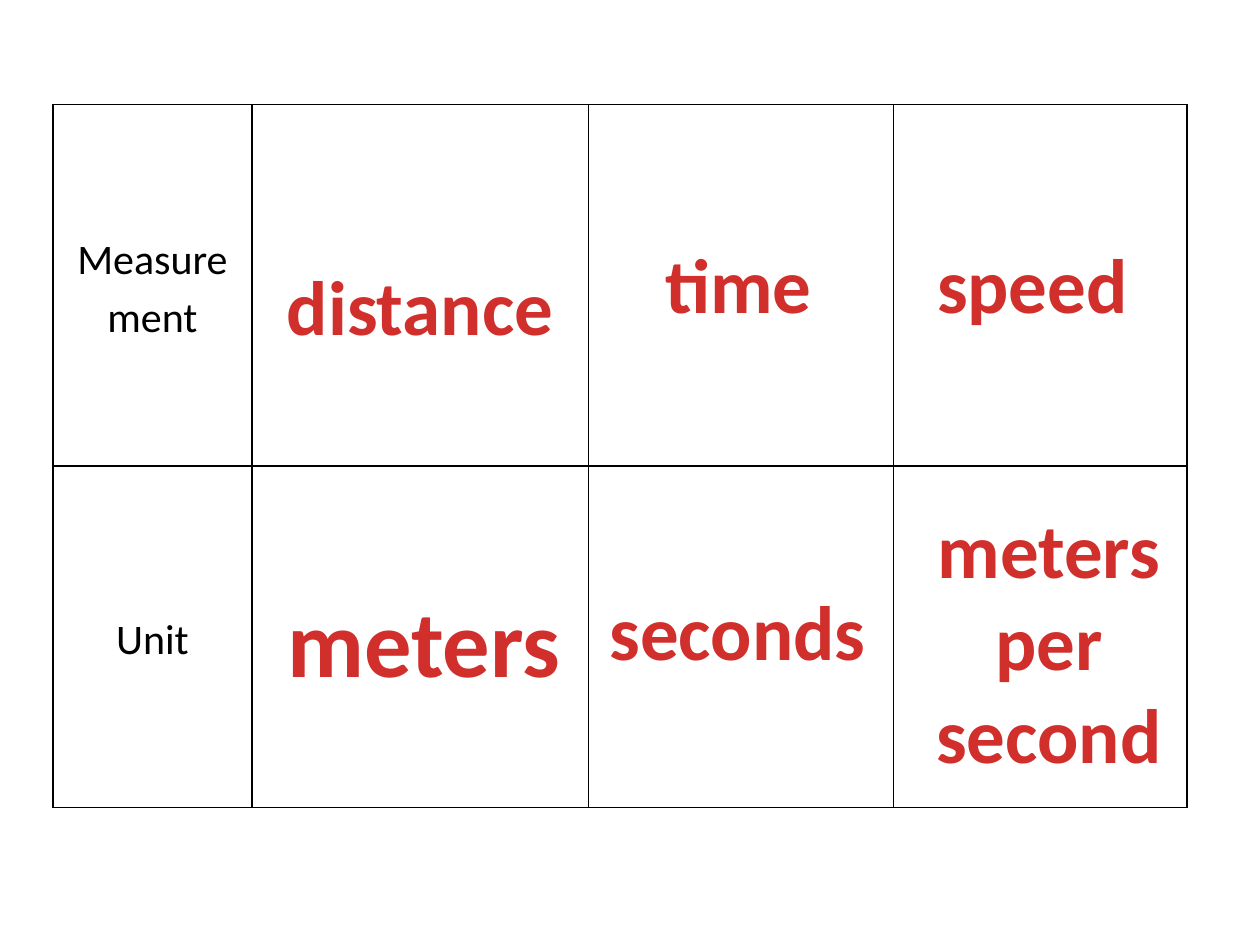
from lxml.etree import SubElement
from pptx import Presentation
from pptx.dml.color import RGBColor
from pptx.enum.text import MSO_ANCHOR as Anchor, MSO_AUTO_SIZE as AutoSize, PP_ALIGN as Align
from pptx.oxml.ns import qn
from pptx.util import Inches, Pt

BLACK, RED = "000000", "D02F2C"


def color(value):
    return RGBColor.from_string(value)


class SlideBuilder:
    """Holds the style and the current slide."""

    font_name = "Calibri"
    label_format = {"size": Pt(24), "bold": False}

    def __init__(self, page):
        self.page = page

    def add_text(self, frame, text, font_color, formats):
        para = frame.paragraphs[0]
        para.alignment = Align.CENTER
        span = para.add_run()
        span.text = text
        span.font.name = self.font_name
        span.font.color.rgb = color(font_color)
        for name, value in formats.items():
            setattr(span.font, name, value)
        return para

    def border(self, cell):
        properties = cell._tc.get_or_add_tcPr()
        for side in ("lnL", "lnR", "lnT", "lnB"):
            line = SubElement(properties, qn(f"a:{side}"), w=str(Pt(1)))
            fill = SubElement(line, qn("a:solidFill"))
            SubElement(fill, qn("a:srgbClr"), val=BLACK)

    def table(self, left, top, widths, heights, labels):
        """Draw a bordered grid with row labels in the first column."""
        table = self.page.shapes.add_table(
            len(heights), len(widths), Inches(left), Inches(top),
            Inches(sum(widths)), Inches(sum(heights))).table
        table.first_row = table.horz_banding = False
        for column, width in zip(table.columns, widths):
            column.width = Inches(width)
        for row, height in zip(table.rows, heights):
            row.height = Inches(height)
        for cell in table.iter_cells():
            self.border(cell)
            cell.fill.background()
        for index, label in enumerate(labels):
            cell = table.cell(index, 0)
            cell.vertical_anchor = Anchor.MIDDLE
            cell.margin_left = cell.margin_right = Inches(0.07)
            cell.margin_top = cell.margin_bottom = 0
            para = self.add_text(cell.text_frame, label, BLACK, self.label_format)
            para.line_spacing = 1.15

    def answer(self, text, left, top, width, height=0.84, size=44, wrap=False):
        box = self.page.shapes.add_textbox(*map(Inches, (left, top, width, height)))
        frame = box.text_frame
        frame.word_wrap = wrap
        frame.auto_size = AutoSize.SHAPE_TO_FIT_TEXT
        self.add_text(frame, text, RED, {"size": Pt(size), "bold": True})


def main():
    deck = Presentation()
    deck.slide_width, deck.slide_height = Inches(10), Inches(7.5)
    builder = SlideBuilder(deck.slides.add_slide(deck.slide_layouts[6]))

    builder.table(0.42, 0.83, [1.58, 2.67, 2.42, 2.33], [2.87, 2.71],
                  ["Measurement", "Unit"])
    builder.answer("distance", 2.17, 2, 2.33)
    builder.answer("time", 5.17, 1.83, 1.38)
    builder.answer("speed", 7.33, 1.83, 1.73)
    builder.answer("meters", 2.17, 4.58, 2.39, height=1.01, size=54)
    builder.answer("seconds", 4.73, 4.58, 2.25)
    builder.answer("meters per second", 6.99, 3.93, 2.67, height=2.32, wrap=True)

    deck.save("out.pptx")


if __name__ == "__main__":
    main()
